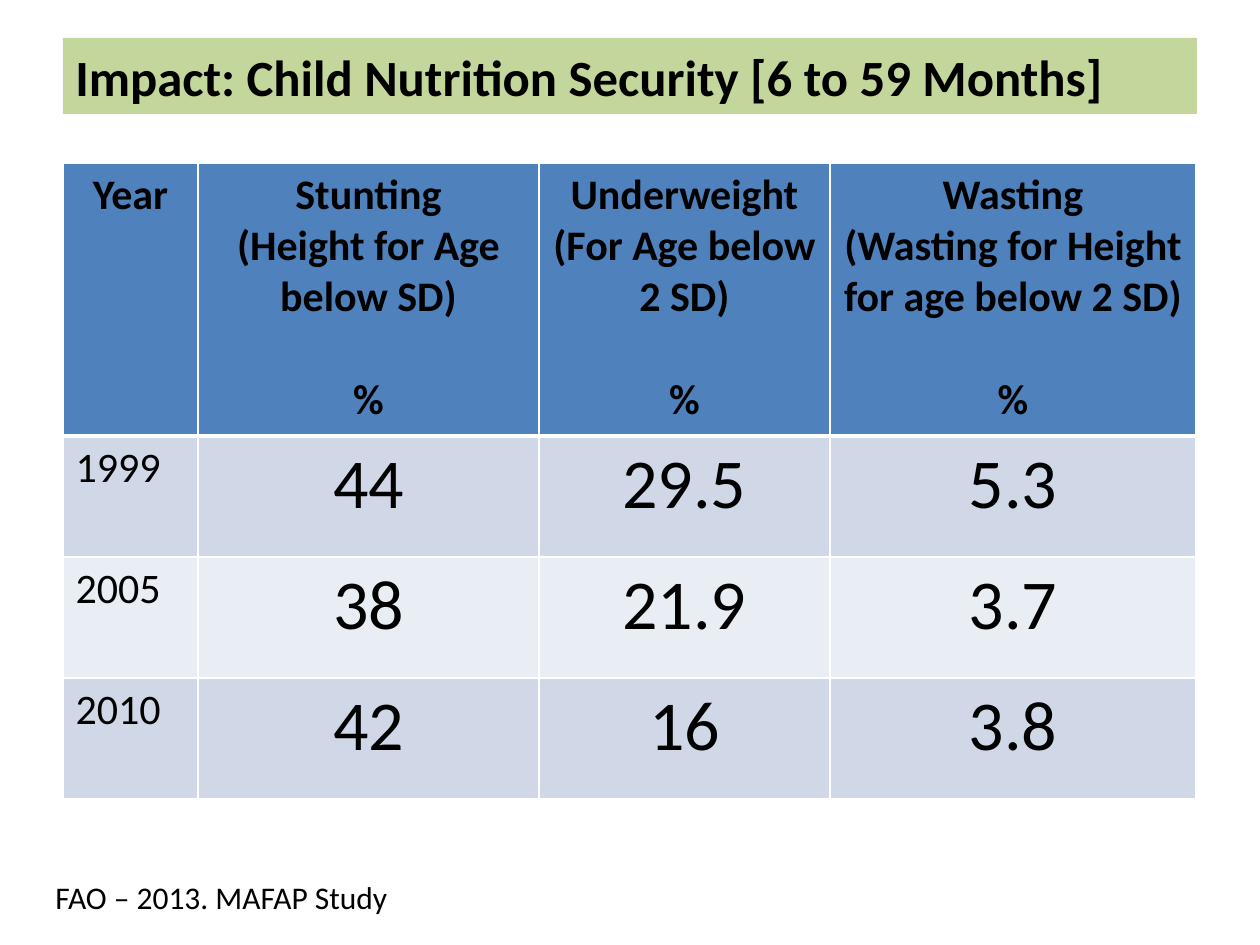
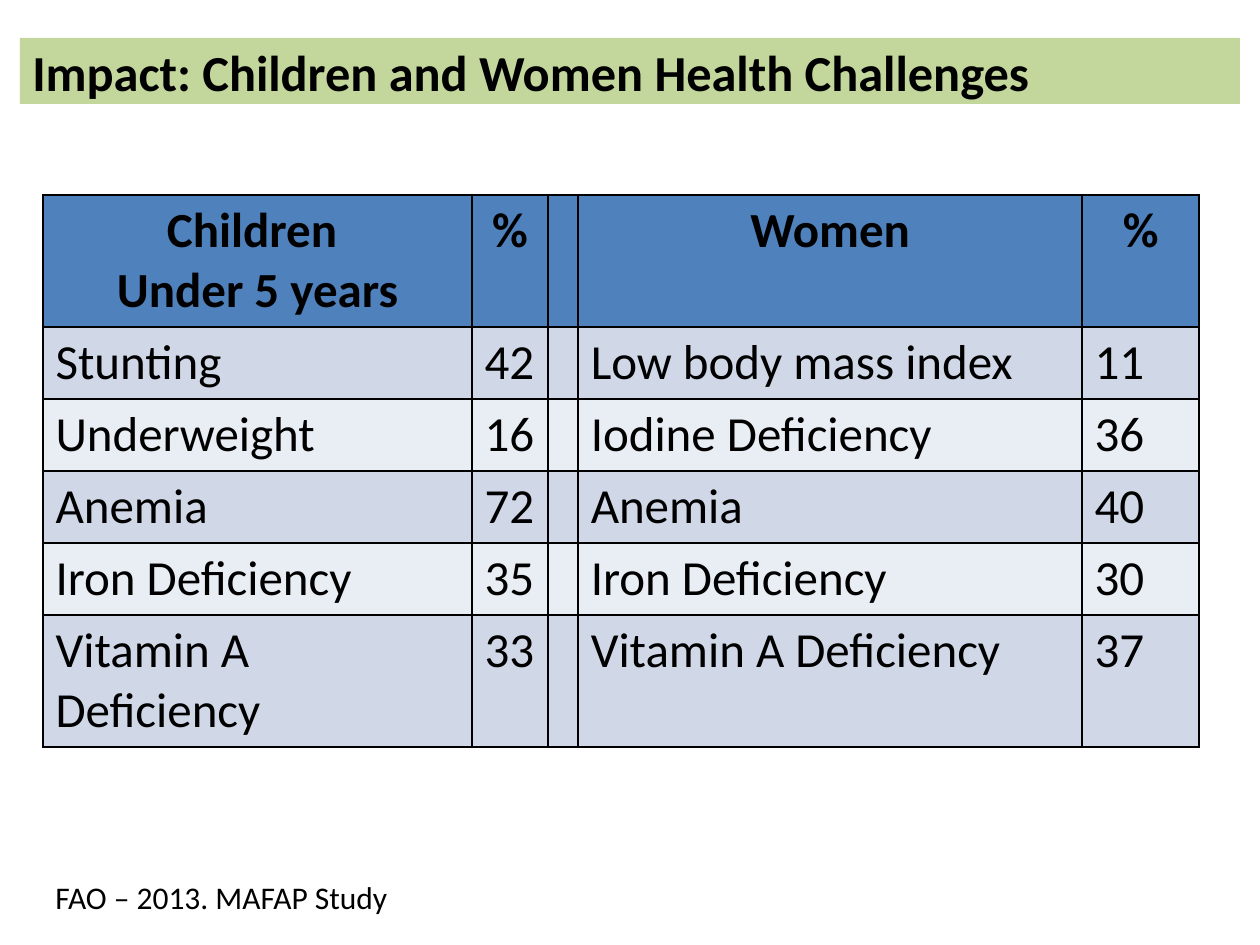
from lxml import etree
from pptx import Presentation
from pptx.dml.color import RGBColor
from pptx.enum.shapes import MSO_SHAPE
from pptx.enum.text import MSO_ANCHOR, PP_ALIGN
from pptx.oxml.ns import qn
from pptx.util import Emu, Pt

PX = 7257.14  # EMU per px, 126 px to the inch
FONT = "Calibri"
BLACK, WHITE = "000000", "FFFFFF"
TITLE_GREEN, HEADER_BLUE = "C3D69B", "4F81BD"
BAND_FILLS = "D0D8E8", "E9EDF4"
LEFT, CENTER = PP_ALIGN.LEFT, PP_ALIGN.CENTER

SOURCE_NOTE = "FAO – 2013. MAFAP Study"
SOURCE_BOX = 43, 872, 708, 50

# Styles for body cells are (size, alignment); a header cell is a list of
# paragraphs, and "%" may be set one line lower through unit_gap.
SLIDES = [
    dict(
        title="Impact: Child Nutrition Security [6 to 59 Months]",
        title_box=(63, 38, 1134, 76), title_size=29,
        origin=(63, 163), cols=(135, 341, 291, 366), rows=(273, 121, 121, 121),
        header=[
            ["Year"],
            ["Stunting", "(Height for Age below SD)", "%"],
            ["Underweight", "(For Age below 2 SD)", "%"],
            ["Wasting", "(Wasting for Height for age below 2 SD)", "%"],
        ],
        body=[
            ("1999", "44", "29.5", "5.3"),
            ("2005", "38", "21.9", "3.7"),
            ("2010", "42", "16", "3.8"),
        ],
        header_size=24, unit_gap=29.3,
        label_style=(24, LEFT), value_style=(40, CENTER),
        border=WHITE, header_rule=3,
    ),
    dict(
        title="Impact: Children and Women Health Challenges",
        title_box=(20, 38, 1220, 66), title_size=28.8,
        origin=(43, 195), cols=(429, 76, 29, 504, 117),
        rows=(132, 72, 72, 72, 72, 132),
        header=[["Children ", "Under 5 years"], ["%"], [], ["Women"], ["%"]],
        body=[
            ("Stunting", "42", "", "Low body mass index", "11"),
            ("Underweight", "16", "", "Iodine Deficiency", "36"),
            ("Anemia", "72", "", "Anemia", "40"),
            ("Iron Deficiency", "35", "", "Iron Deficiency", "30"),
            ("Vitamin A Deficiency", "33", "", "Vitamin A Deficiency", "37"),
        ],
        header_size=28, unit_gap=0,
        label_style=(28, LEFT), value_style=(28, LEFT),
        border=BLACK, header_rule=1,
    ),
]


def px(*lengths):
    return [Emu(round(n * PX)) for n in lengths]


def rgb(color):
    return RGBColor.from_string(color)


def fill_with(target, color):
    target.fill.solid()
    target.fill.fore_color.rgb = rgb(color)


def write(tf, lines, size, bold=False, align=LEFT, unit_gap=0):
    for i, line in enumerate(lines):
        p = tf.paragraphs[0] if i == 0 else tf.add_paragraph()
        p.alignment = align
        if i and line == "%":
            p.space_before = Pt(unit_gap)
        r = p.add_run()
        r.text = line
        for name, value in dict(name=FONT, size=Pt(size), bold=bold).items():
            setattr(r.font, name, value)
        r.font.color.rgb = rgb(BLACK)


def set_borders(cell, color, top=1, bottom=1):
    tc_pr = cell._tc.get_or_add_tcPr()
    for side, width in dict(L=1, R=1, T=top, B=bottom).items():
        ln = etree.SubElement(tc_pr, qn(f"a:ln{side}"), w=str(Pt(width)))
        solid = etree.SubElement(ln, qn("a:solidFill"))
        etree.SubElement(solid, qn("a:srgbClr"), val=color)


def add_title(s, text, box, size):
    sp = s.shapes.add_shape(MSO_SHAPE.RECTANGLE, *px(*box))
    sp.shadow.inherit = False
    fill_with(sp, TITLE_GREEN)
    sp.line.fill.background()
    tf = sp.text_frame
    tf.word_wrap = True
    tf.vertical_anchor = MSO_ANCHOR.MIDDLE
    write(tf, [text], size, bold=True)


def add_data_table(s, d):
    cols, rows = d["cols"], d["rows"]
    table = s.shapes.add_table(len(rows), len(cols),
                               *px(*d["origin"], sum(cols), sum(rows))).table
    for column, width in zip(table.columns, px(*cols)):
        column.width = width
    for row, height in zip(table.rows, px(*rows)):
        row.height = height

    for c, lines in enumerate(d["header"]):
        cell = table.cell(0, c)
        set_borders(cell, d["border"], bottom=d["header_rule"])
        fill_with(cell, HEADER_BLUE)
        write(cell.text_frame, lines, d["header_size"], True, CENTER, d["unit_gap"])

    for r, values in enumerate(d["body"]):
        for c, value in enumerate(values):
            cell = table.cell(r + 1, c)
            set_borders(cell, d["border"], top=1 if r else d["header_rule"])
            fill_with(cell, BAND_FILLS[r % 2])
            size, align = d["value_style"] if c else d["label_style"]
            write(cell.text_frame, [value] if value else [], size, align=align)


def add_source_note(s):
    tf = s.shapes.add_textbox(*px(*SOURCE_BOX)).text_frame
    tf.word_wrap = True
    write(tf, [SOURCE_NOTE], 18)


def main():
    prs = Presentation()
    prs.slide_width, prs.slide_height = px(1260, 945)
    for d in SLIDES:
        s = prs.slides.add_slide(prs.slide_layouts[6])
        add_title(s, d["title"], d["title_box"], d["title_size"])
        add_data_table(s, d)
        add_source_note(s)
    prs.save("out.pptx")


if __name__ == "__main__":
    main()
